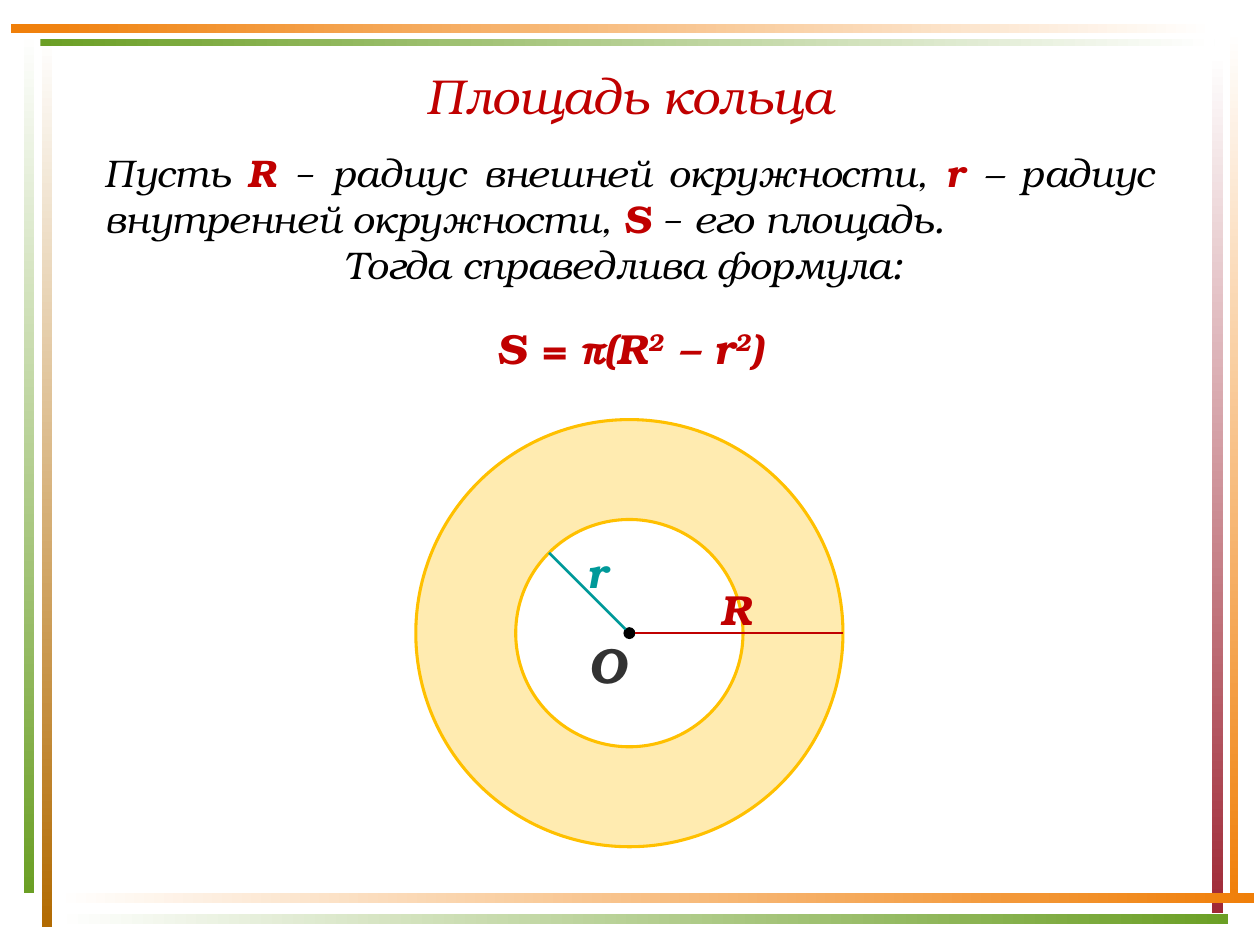
import math

from lxml import etree
from pptx import Presentation
from pptx import util as u
from pptx.dml.color import RGBColor
from pptx.enum import shapes, text
from pptx.oxml import ns

FONT = "TeX Gyre Bonum"
RED, TEAL, GOLD, BLACK, WHITE = "C00000", "009999", "FFC000", "000000", "FFFFFF"
ORANGE, GREEN, BROWN, WINE = "F07F09", "6B9F25", "B26B02", "9F2936"
CENTER_X, CENTER_Y = 49.95, 50.25
OUTER, INNER, DOT = 16.95, 9.02, 0.42


def cells(*counts):
    """Turn counts of grid cells, 100 columns by 75 rows, into lengths."""
    return [u.Inches(count / 10) for count in counts]


def color(value):
    """Read a hex string as a colour."""
    return RGBColor.from_string(value)


def style(font, size=None, ink=None, bold=None, name=None):
    """Set the given properties of a font."""
    if size:
        font.size = u.Pt(size)
        font.italic = True
    if ink:
        font.color.rgb = color(ink)
    if bold is not None:
        font.bold = bold
    if name:
        font.name = name


def add_bar(slide, box, start, end):
    """Add a frame bar that fades along its length."""
    bar = slide.shapes.add_shape(shapes.MSO_SHAPE.RECTANGLE, *cells(*box))
    bar.shadow.inherit = False
    bar.line.fill.background()
    bar.fill.gradient()
    bar.fill.gradient_angle = 0 if bar.width > bar.height else 270
    for stop, value in zip(bar.fill.gradient_stops, (start, end)):
        stop.color.rgb = color(value)


def add_frame(slide):
    """Add the pairs of bars along the four edges."""
    for box, ink in (((3.3, 2.8, 0.8, 70.8), BROWN), ((1.9, 2.5, 0.8, 68.4), GREEN),
                     ((97.6, 2.4, 0.7, 69.3), ORANGE), ((96.2, 4.2, 0.9, 68.3), WINE),
                     ((4.5, 70.9, 95, 0.8), ORANGE), ((4.5, 72.5, 93, 0.8), GREEN)):
        add_bar(slide, box, WHITE, ink)
    for box, ink in (((3.2, 3.1, 93.2, 0.6), GREEN), ((0.85, 1.9, 95.6, 0.7), ORANGE)):
        add_bar(slide, box, ink, WHITE)


def place(shape, box):
    """Move a shape to a box of the grid."""
    shape.left, shape.top, shape.width, shape.height = cells(*box)


def add_run(paragraph, words, **look):
    """Add a run with its own look."""
    run = paragraph.add_run()
    run.text = words
    style(run.font, **look)
    return run


def fill_title(title):
    """Write the heading."""
    place(title, (6.2, 4.4, 87.5, 6.2))
    title.text_frame.text = "Площадь кольца"
    title.text_frame.auto_size = text.MSO_AUTO_SIZE.NONE
    style(title.text_frame.paragraphs[0].font, 28, RED, name=FONT)


def fill_body(body):
    """Write the definitions and the lead-in to the formula."""
    place(body, (7.3, 11.3, 85.3, 12.1))
    frame = body.text_frame
    frame.auto_size = text.MSO_AUTO_SIZE.NONE
    definitions, lead_in = frame.paragraphs[0], frame.add_paragraph()
    for paragraph, align in ((definitions, text.PP_ALIGN.JUSTIFY),
                             (lead_in, text.PP_ALIGN.CENTER)):
        paragraph.alignment = align
        paragraph.space_before = u.Pt(0)
        properties = paragraph._p.get_or_add_pPr()
        properties.set("marL", "0")
        properties.set("indent", "0")
        etree.SubElement(properties, ns.qn("a:buNone"))
        style(paragraph.font, 22, BLACK, name=FONT)
    for words in ("Пусть ", "R ", "−", " радиус внешней окружности, ", "r ",
                  "– радиус внутренней окружности, ", "S ", "−", " его площадь. "):
        if words in ("R ", "r ", "S "):
            add_run(definitions, words, ink=RED, bold=True)
        else:
            add_run(definitions, words, name="Cambria" if words == "−" else None)
    add_run(lead_in, "Тогда справедлива формула: ")


def add_label(slide, box, words, size, ink):
    """Add a bold label and return its paragraph."""
    frame = slide.shapes.add_textbox(*cells(*box)).text_frame
    frame.word_wrap = len(words) == 1
    paragraph = frame.paragraphs[0]
    style(paragraph.font, size, ink, True, FONT)
    add_run(paragraph, words)
    return paragraph


def add_formula(slide):
    """Add the formula with raised exponents."""
    paragraph = add_label(slide, (37.9, 25.1, 24.1, 5), "S = π(R", 24, RED)
    paragraph.alignment = text.PP_ALIGN.CENTER
    for words in ("2", " – r", "2", ")"):
        run = add_run(paragraph, words)
        if words == "2":
            run._r.get_or_add_rPr().set("baseline", "30000")


def add_round(slide, kind, radius, ink, width):
    """Add a round shape about the common centre."""
    shape = slide.shapes.add_shape(
        kind, *cells(CENTER_X - radius, CENTER_Y - radius, 2 * radius, 2 * radius))
    shape.shadow.inherit = False
    shape.fill.solid()
    shape.fill.fore_color.rgb = color(ink)
    shape.line.color.rgb = color(ink)
    shape.line.width = u.Pt(width)
    return shape


def add_ring(slide):
    """Add the half-clear ring between the two circles."""
    ring = add_round(slide, shapes.MSO_SHAPE.DONUT, OUTER, GOLD, 1.75)
    ring.adjustments[0] = (OUTER - INNER) / (2 * OUTER)
    tint = ring.fill._xPr.find(ns.qn("a:solidFill"))[0]
    etree.SubElement(tint, ns.qn("a:alpha"), val="31000")


def add_radius(slide, length, degrees, ink):
    """Add a radius from the edge of the centre dot."""
    across, down = math.cos(math.radians(degrees)), -math.sin(math.radians(degrees))
    ends = [place for reach in (DOT, length)
            for place in (CENTER_X + reach * across, CENTER_Y + reach * down)]
    line = slide.shapes.add_connector(shapes.MSO_CONNECTOR.STRAIGHT, *cells(*ends))
    line.line.color.rgb = color(ink)
    line.line.width = u.Pt(1.5)
    etree.SubElement(line._element.spPr, ns.qn("a:effectLst"))


def main():
    """Build and save the slide."""
    presentation = Presentation()
    presentation.slide_width, presentation.slide_height = cells(100, 75)
    slide = presentation.slides.add_slide(presentation.slide_layouts[1])
    add_frame(slide)
    fill_title(slide.shapes.title)
    fill_body(slide.placeholders[1])
    add_round(slide, shapes.MSO_SHAPE.OVAL, DOT, BLACK, 0.75)
    add_label(slide, (45.7, 49.9, 5, 5.7), "О", 28, "323232")
    add_ring(slide)
    add_label(slide, (56.2, 45.8, 5, 5), "R", 24, RED)
    add_radius(slide, OUTER, 0, RED)
    add_label(slide, (45.6, 42.9, 4.3, 5), "r", 24, TEAL)
    add_radius(slide, INNER, 135, TEAL)
    add_formula(slide)
    presentation.save("out.pptx")


if __name__ == "__main__":
    main()
